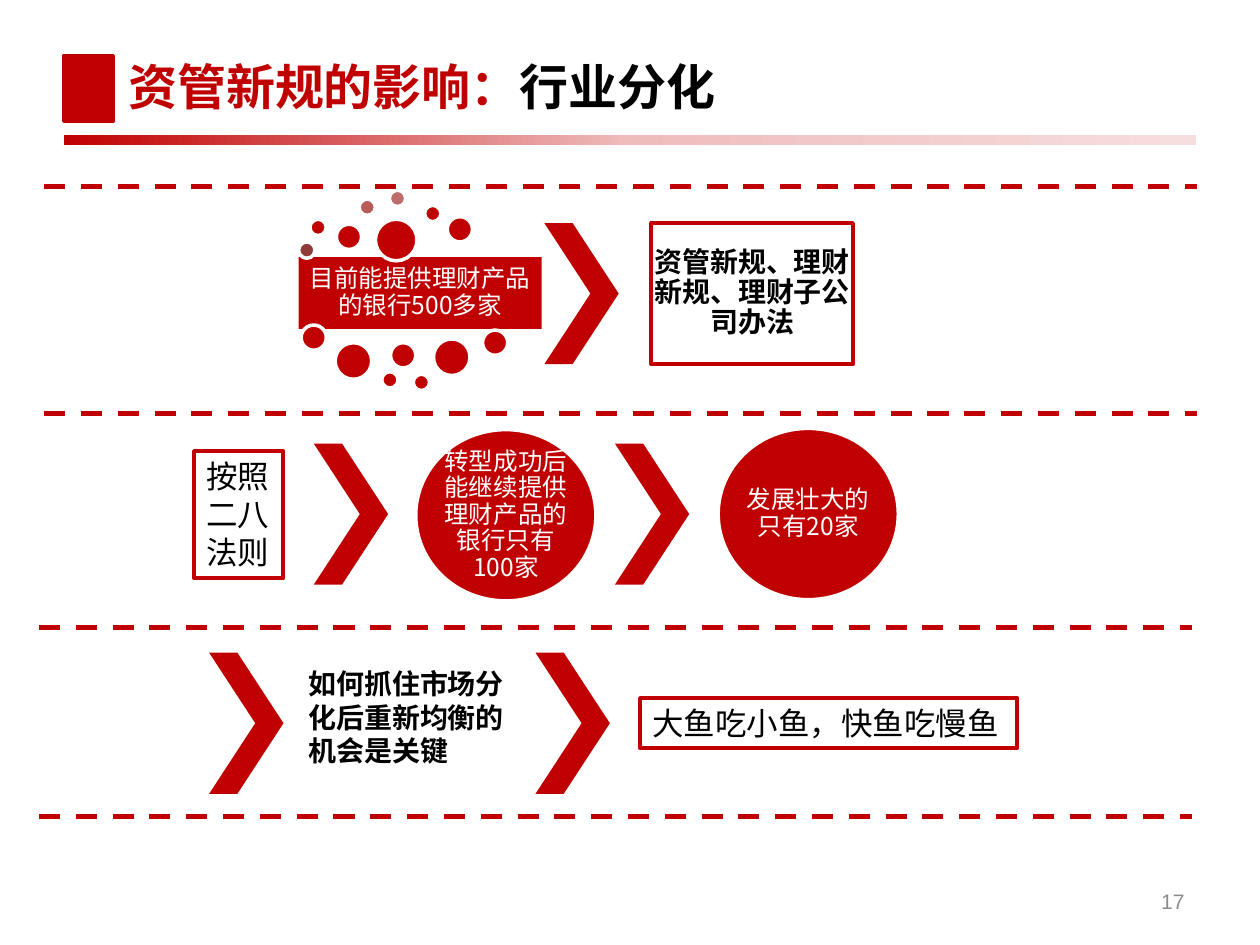
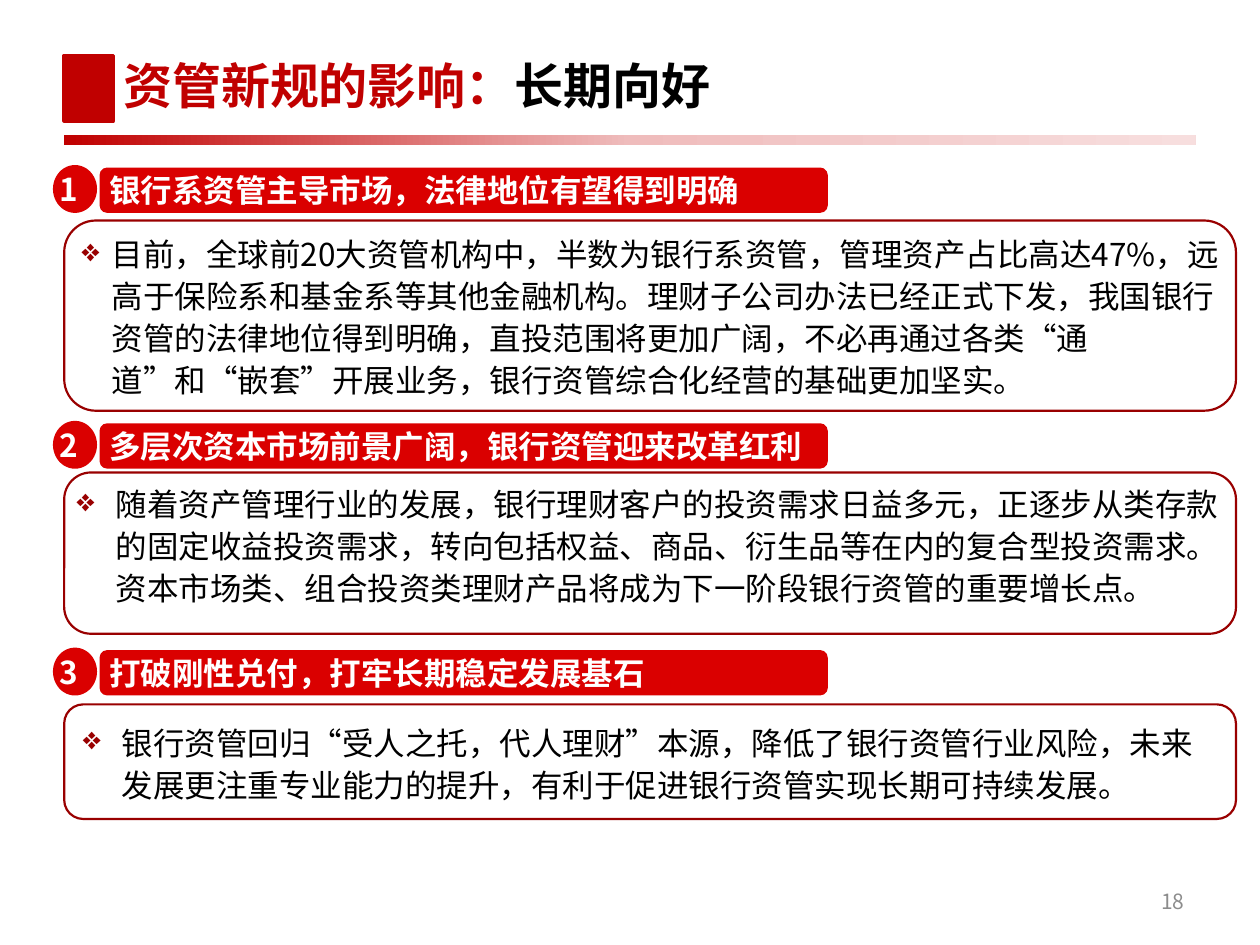
from lxml import etree
from pptx import Presentation
from pptx import util as u
from pptx.dml.color import RGBColor
from pptx.enum import dml, shapes, text
from pptx.oxml import ns

Inches, Pt = u.Inches, u.Pt
KIND = shapes.MSO_SHAPE
ALIGN = text.PP_ALIGN
MIDDLE, TOP = text.MSO_ANCHOR.MIDDLE, text.MSO_ANCHOR.TOP

# Shared look
RED = RGBColor(0xC0, 0x00, 0x00)
BRIGHT_RED = RGBColor(0xDA, 0x00, 0x00)
DARK_RED = RGBColor(0x99, 0x00, 0x00)
BROWN = RGBColor(0x8E, 0x3B, 0x39)
ROSE = RGBColor(0xB8, 0x5B, 0x59)
PALE_ROSE = RGBColor(0xBF, 0x6D, 0x6C)
BLACK = RGBColor(0x00, 0x00, 0x00)
WHITE = RGBColor(0xFF, 0xFF, 0xFF)
GREY = RGBColor(0x8C, 0x8C, 0x8C)
BAND_STOPS = [(0, RED), (50, RGBColor(0xEF, 0xBC, 0xBC)),
              (100, RGBColor(0xF7, 0xDE, 0xDE))]
CJK, LATIN = "Noto Sans CJK SC", "Arial"
BOX_INSETS = (0.1, 0.05, 0.1, 0.05)

# Dots around the bank count: left, top, diameter, colour
DOTS = [
    (2.37, 1.92, 0.13, BROWN), (2.46, 1.74, 0.13, RED),
    (2.67, 1.78, 0.2, RED), (2.85, 1.58, 0.13, ROSE),
    (3.09, 1.51, 0.13, PALE_ROSE), (3.37, 1.63, 0.13, RED),
    (3.55, 1.72, 0.2, RED), (2.98, 1.74, 0.33, RED),
    (2.39, 2.58, 0.2, RED), (2.66, 2.72, 0.29, RED),
    (3.03, 2.95, 0.13, RED), (3.1, 2.72, 0.2, RED),
    (3.28, 2.97, 0.13, RED), (3.44, 2.69, 0.29, RED),
    (3.83, 2.62, 0.2, RED),
]
CHEVRONS = [(4.32, 1.77), (2.49, 3.52), (4.88, 3.52), (1.66, 5.18), (4.25, 5.18)]
DIVIDERS = [(0.35, 1.48), (0.35, 3.28), (0.31, 4.98), (0.31, 6.48)]

# Arguments: heading, heading top, frame top and height,
# body left, top and width, hanging indent, body text
ARGUMENTS = [
    ("银行系资管主导市场，法律地位有望得到明确", 1.33, (1.75, 1.51),
     (0.55, 1.78, 9.23), 0.24,
     "目前，全球前20大资管机构中，半数为银行系资管，管理资产占比高达47%，"
     "远高于保险系和基金系等其他金融机构。理财子公司办法已经正式下发，"
     "我国银行资管的法律地位得到明确，直投范围将更加广阔，不必再通过各类"
     "“通道”和“嵌套”开展业务，银行资管综合化经营的基础更加坚实。"),
    ("多层次资本市场前景广阔，银行资管迎来改革红利", 3.36, (3.75, 1.28),
     (0.51, 3.77, 9.28), 0.31,
     "随着资产管理行业的发展，银行理财客户的投资需求日益多元，正逐步从类存款"
     "的固定收益投资需求，转向包括权益、商品、衍生品等在内的复合型投资需求。"
     "资本市场类、组合投资类理财产品将成为下一阶段银行资管的重要增长点。"),
    ("打破刚性兑付，打牢长期稳定发展基石", 5.16, (5.59, 0.91),
     (0.56, 5.66, 9.06), 0.31,
     "银行资管回归“受人之托，代人理财”本源，降低了银行资管行业风险，"
     "未来发展更注重专业能力的提升，有利于促进银行资管实现长期可持续发展。"),
]


def add_child(parent, tag, **attributes):
    child = etree.SubElement(parent, ns.qn(tag))
    for name, value in attributes.items():
        child.set(name, value)
    return child


def add_span(para, words, size, color, bold=False, font=CJK):
    span = para.add_run()
    span.text = words
    span.font.size = Pt(size)
    span.font.bold = bold
    span.font.color.rgb = color
    span.font.name = font
    properties = span.font._element
    properties.set("lang", "zh-CN")
    add_child(properties, "a:ea", typeface=font)


def prepare_text(box, insets=BOX_INSETS, anchor=TOP, align=ALIGN.LEFT, spacing=None):
    frame = box.text_frame
    frame.word_wrap = True
    frame.vertical_anchor = anchor
    (frame.margin_left, frame.margin_top,
     frame.margin_right, frame.margin_bottom) = map(Inches, insets)
    para = frame.paragraphs[0]
    para.alignment = align
    if spacing:
        para.line_spacing = spacing
    return para


def add_text_box(page, area, **layout):
    box = page.shapes.add_textbox(*map(Inches, area))
    return prepare_text(box, **layout)


def add_figure(page, kind, area, fill=None, line=None, width=2):
    figure = page.shapes.add_shape(kind, *map(Inches, area))
    figure.shadow.inherit = False
    if fill is None:
        figure.fill.background()
    else:
        figure.fill.solid()
        figure.fill.fore_color.rgb = fill
    if line is None:
        figure.line.fill.background()
    else:
        figure.line.color.rgb = line
        figure.line.width = Pt(width)
    return figure


def add_band(page):
    band = add_figure(page, KIND.RECTANGLE, (0.51, 1.07, 8.98, 0.08))
    band.fill.gradient()
    band.fill.gradient_angle = 0
    stops = band._element.spPr.find(".//" + ns.qn("a:gsLst"))
    for stop in list(stops):
        stops.remove(stop)
    for percent, color in BAND_STOPS:
        stop = add_child(stops, "a:gs", pos=str(percent * 1000))
        add_child(stop, "a:srgbClr", val=str(color))


def add_page(deck, topic, title_left, title_top, number, number_font):
    page = deck.slides.add_slide(deck.slide_layouts[6])
    add_band(page)
    add_figure(page, KIND.RECTANGLE, (0.51, 0.44, 0.39, 0.52), RED, RED)
    title = add_text_box(page, (title_left, title_top, 7.83, 0.57))
    add_span(title, "资管新规的影响：", 28, RED, True)
    add_span(title, topic, 28, BLACK, True)
    footer = add_text_box(page, (7.17, 6.95, 2.33, 0.4), anchor=MIDDLE,
                          align=ALIGN.RIGHT)
    add_span(footer, number, 12, GREY, font=number_font)
    return page


def add_chevron(page, left, top):
    chevron = add_figure(page, KIND.CHEVRON, (left, top, 0.59, 1.12), RED)
    chevron.adjustments[0] = 0.62


def add_divider(page, left, top):
    divider = page.shapes.add_connector(
        shapes.MSO_CONNECTOR.STRAIGHT, Inches(left), Inches(top),
        Inches(left + 9.15), Inches(top))
    divider.line.color.rgb = RED
    divider.line.width = Pt(3)
    divider.line.dash_style = dml.MSO_LINE.DASH
    add_child(divider._element.spPr, "a:effectLst")


def add_centred(figure, words, size, color, bold=False, inset=0):
    para = prepare_text(figure, (inset,) * 4, MIDDLE, ALIGN.CENTER, 0.9)
    add_span(para, words, size, color, bold)


def add_bank_circle(page, left, top, words):
    circle = add_figure(page, KIND.OVAL, (left, top, 1.43, 1.36), RED, WHITE)
    add_centred(circle, words, 14, WHITE)


def add_outlined_note(page, area, words):
    note = add_figure(page, KIND.RECTANGLE, area, line=RED, width=2.25)
    add_span(prepare_text(note), words, 18, BLACK)


def add_argument(page, number, heading, top, frame, body_area, hanging, body):
    badge = add_figure(page, KIND.OVAL, (0.42, top - 0.02, 0.35, 0.38), BRIGHT_RED)
    add_span(prepare_text(badge, (0,) * 4, MIDDLE), str(number), 18, WHITE, True)
    label = add_figure(page, KIND.FLOWCHART_ALTERNATE_PROCESS,
                       (0.79, top, 5.78, 0.36), BRIGHT_RED)
    add_span(prepare_text(label, (0.06, 0, 0, 0), MIDDLE), heading, 18, WHITE, True)

    frame_top, frame_height = frame
    add_figure(page, KIND.ROUNDED_RECTANGLE, (0.51, frame_top, 9.3, frame_height),
               line=DARK_RED, width=1.25)
    para = add_text_box(page, (*body_area, frame_height - 0.1))
    properties = para._p.get_or_add_pPr()
    properties.set("marL", str(Inches(hanging)))
    properties.set("indent", str(-Inches(hanging)))
    add_child(add_child(properties, "a:buClr"), "a:srgbClr", val=str(DARK_RED))
    add_child(properties, "a:buChar", char="❖")
    para.line_spacing = Pt(24)
    add_span(para, body, 18, BLACK)


def build_split_page(deck):
    page = add_page(deck, "行业分化", 0.92, 0.4, "17", LATIN)
    for left, top in DIVIDERS:
        add_divider(page, left, top)
    for left, top in CHEVRONS:
        add_chevron(page, left, top)

    # Today's banks and the new rules
    banks = add_figure(page, KIND.RECTANGLE, (2.37, 2.04, 1.93, 0.57), RED)
    add_centred(banks, "目前能提供理财产品的银行500多家", 14, WHITE, inset=0.02)
    for left, top, size, color in DOTS:
        add_figure(page, KIND.OVAL, (left, top, size, size), color, WHITE)
    rules = add_figure(page, KIND.RECTANGLE, (5.17, 1.77, 1.6, 1.12),
                       line=RED, width=2.25)
    add_centred(rules, "资管新规、理财新规、理财子公司办法", 16, BLACK, True, 0.01)

    # The 80/20 rule
    add_outlined_note(page, (1.54, 3.58, 0.71, 1.01), "按照二八法则")
    add_bank_circle(page, 3.3, 3.41, "转型成功后能继续提供理财产品的银行只有100家")
    add_bank_circle(page, 5.7, 3.4, "发展壮大的只有20家")

    # Conclusion
    key = add_text_box(page, (2.35, 5.24, 1.89, 0.91))
    add_span(key, "如何抓住市场分化后重新均衡的机会是关键", 16, BLACK, True)
    add_outlined_note(page, (5.08, 5.54, 2.99, 0.4), "大鱼吃小鱼，快鱼吃慢鱼")


def build_outlook_page(deck):
    page = add_page(deck, "长期向好", 0.88, 0.39, "18", CJK)
    for number, argument in enumerate(ARGUMENTS, 1):
        add_argument(page, number, *argument)


def main():
    deck = Presentation()
    deck.slide_width, deck.slide_height = Inches(10), Inches(7.5)
    build_split_page(deck)
    build_outlook_page(deck)
    deck.save("out.pptx")


if __name__ == "__main__":
    main()
